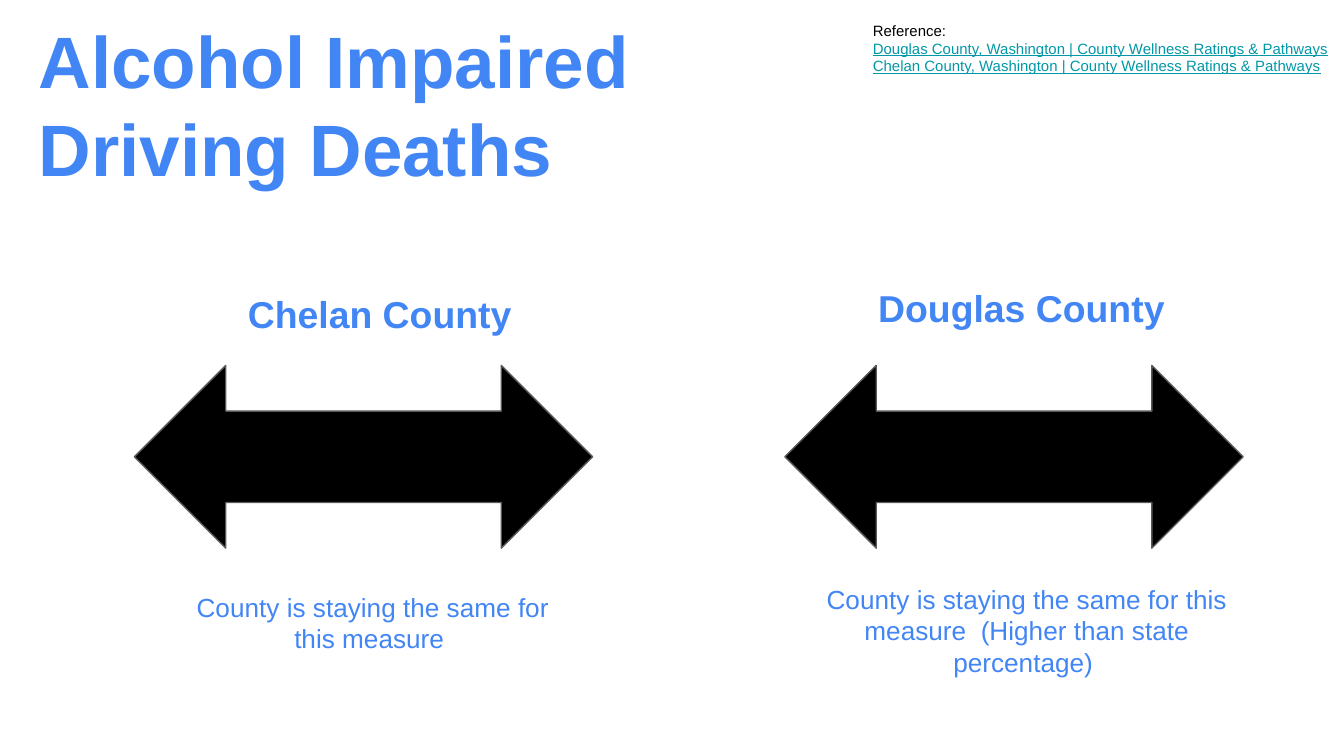
from dataclasses import dataclass

from pptx import Presentation
from pptx.dml.color import RGBColor
from pptx.enum import shapes, text
from pptx.util import Pt


@dataclass(frozen=True)
class Theme:
    font: str = "Arial"
    blue: RGBColor = RGBColor(0x42, 0x85, 0xF4)
    teal: RGBColor = RGBColor(0x00, 0x97, 0xA7)
    black: RGBColor = RGBColor(0, 0, 0)
    outline: RGBColor = RGBColor(0x59, 0x59, 0x59)
    title: int = 39
    heading: int = 20
    body: int = 14
    small: int = 8
    inset: float = 7.2


THEME = Theme()
LEFT, CENTER = text.PP_ALIGN.LEFT, text.PP_ALIGN.CENTER


def add_text(page, box, lines, size, color, bold=False, align=LEFT):
    """Place a wrapped text box with one paragraph per line."""
    frame = page.shapes.add_textbox(*map(Pt, box)).text_frame
    frame.word_wrap = True
    frame.auto_size = text.MSO_AUTO_SIZE.SHAPE_TO_FIT_TEXT
    frame.margin_left = frame.margin_right = Pt(THEME.inset)
    frame.margin_top = frame.margin_bottom = Pt(THEME.inset)
    frame.text = "\n".join(lines)
    for para in frame.paragraphs:
        para.alignment = align
        for span in para.runs:
            span.font.name = THEME.font
            span.font.size = Pt(size)
            span.font.bold = bold
            span.font.color.rgb = color
    return frame


def add_references(page, box):
    sources = [f"{county} County, Washington | County Wellness Ratings & Pathways"
               for county in ("Douglas", "Chelan")]
    frame = add_text(page, box, ["Reference:", *sources], THEME.small, THEME.black)
    # The list sits against the right edge of its box
    frame.margin_left, frame.margin_top, frame.margin_right = Pt(109), Pt(10), Pt(4)
    for para in frame.paragraphs[1:]:
        for span in para.runs:
            span.font.color.rgb = THEME.teal
            span.font.underline = True


def add_arrow(page, box):
    arrow = page.shapes.add_shape(shapes.MSO_SHAPE.LEFT_RIGHT_ARROW, *map(Pt, box))
    arrow.shadow.inherit = False
    arrow.fill.solid()
    arrow.fill.fore_color.rgb = THEME.black
    arrow.line.color.rgb = THEME.outline
    arrow.line.width = Pt(0.75)


def add_county(page, box, heading, heading_box, note, note_box):
    """Place an arrow in the box; text boxes are relative to its corner."""
    left, top, _, _ = box

    def within(part):
        x, y, width, height = part
        return left + x, top + y, width, height

    add_text(page, within(heading_box), [heading], THEME.heading, THEME.blue,
             bold=True, align=CENTER)
    add_arrow(page, box)
    add_text(page, within(note_box), [note], THEME.body, THEME.blue, align=CENTER)


def main():
    deck = Presentation()
    deck.slide_width, deck.slide_height = Pt(720), Pt(405)
    page = deck.slides.add_slide(deck.slide_layouts[6])

    # Title and sources
    add_text(page, (13.7, 1.4, 443.5, 109.4), ["Alcohol Impaired", "Driving Deaths"],
             THEME.title, THEME.blue, bold=True)
    add_references(page, (358.6, 1.4, 361.4, 47.5))

    # County comparison
    add_county(page, (72, 195.8, 245.5, 97.9),
               "Chelan County ", (52.6, -46.8, 157.7, 38.9),
               "County is staying the same for this measure ",
               (17.3, 113.8, 221, 48.2))
    add_county(page, (420.5, 195.8, 245.5, 97.9),
               "Douglas County ", (23, -50.4, 213.1, 38.9),
               "County is staying the same for this measure  (Higher than state percentage) ",
               (11.5, 109.5, 236.2, 65.5))

    deck.save("out.pptx")


if __name__ == "__main__":
    main()
